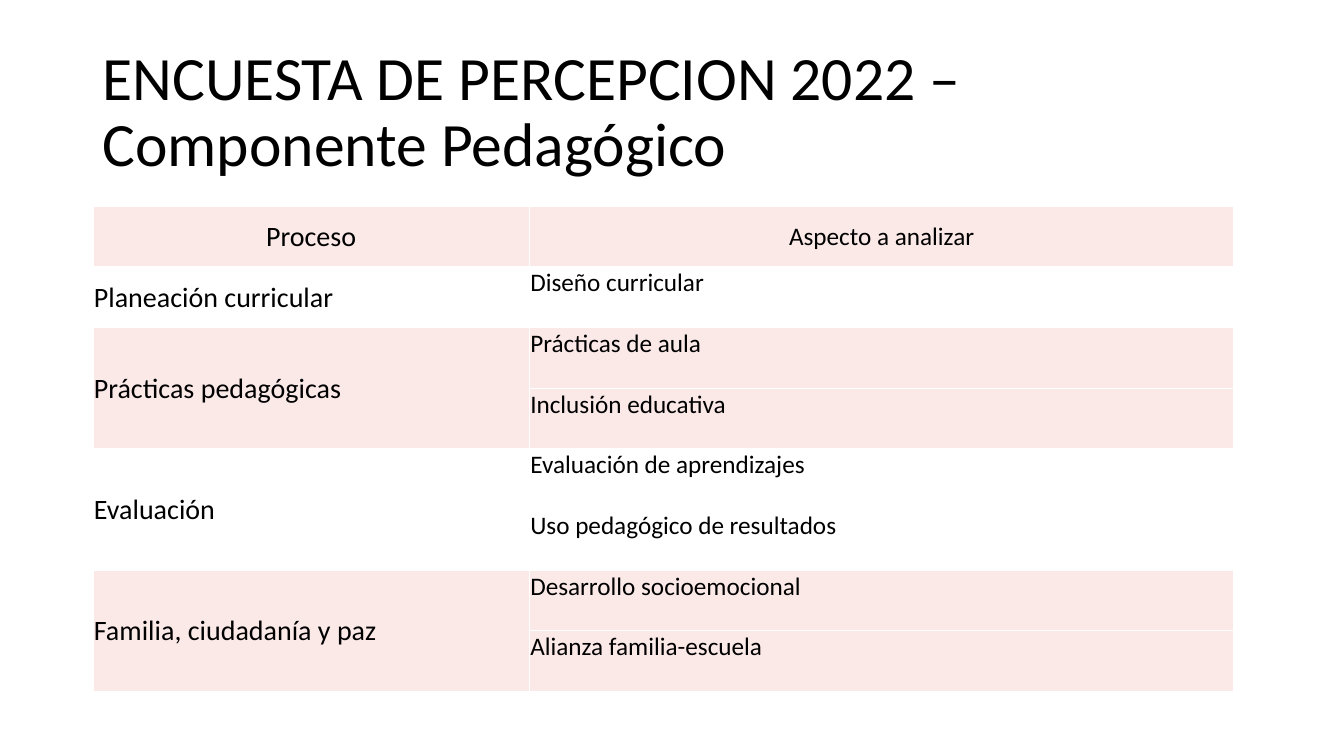
from lxml.etree import SubElement
from pptx import Presentation
from pptx.dml.color import RGBColor
from pptx.enum.text import MSO_ANCHOR, PP_ALIGN
from pptx.oxml.ns import qn
from pptx.util import Pt

FONT = "Calibri"
BLACK = RGBColor(0x00, 0x00, 0x00)
WHITE = RGBColor(0xFF, 0xFF, 0xFF)
PINK = RGBColor(0xFB, 0xE9, 0xE8)

TITLE = "ENCUESTA DE PERCEPCION 2022 – Componente Pedagógico"
HEADINGS = ("Proceso", "Aspecto a analizar")
PROCESSES = [
    ("Planeación curricular", ["Diseño curricular"]),
    ("Prácticas pedagógicas", ["Prácticas de aula", "Inclusión educativa"]),
    ("Evaluación", ["Evaluación de aprendizajes", "Uso pedagógico de resultados"]),
    ("Familia, ciudadanía y paz", ["Desarrollo socioemocional", "Alianza familia-escuela"]),
]
PROCESS_SIZE, ASPECT_SIZE = 20, 18
PROCESS_SHARE = 0.3825
CELL_FORMAT = {
    "margin_left": Pt(0.7),
    "margin_right": Pt(0.7),
    "margin_top": Pt(0.7),
    "margin_bottom": Pt(0),
}


def write(frame, text, size, align):
    para = frame.paragraphs[0]
    para.alignment = align
    span = para.add_run()
    span.text = text
    span.font.name = FONT
    span.font.size = Pt(size)
    span.font.color.rgb = BLACK
    return para


def add_title(page, left, top, width, height):
    title = page.shapes.title
    box = {"left": left, "top": top, "width": width, "height": height}
    for name, value in box.items():
        setattr(title, name, Pt(value))
    title.text_frame.word_wrap = True
    title.text_frame.vertical_anchor = MSO_ANCHOR.MIDDLE
    para = write(title.text_frame, TITLE, 44, PP_ALIGN.LEFT)
    para.line_spacing = 0.9


def style_cell(cell, shaded):
    """Give the cell its margins, white borders and band fill."""
    for name, value in CELL_FORMAT.items():
        setattr(cell, name, value)
    properties = cell._tc.get_or_add_tcPr()
    for side in ("a:lnL", "a:lnR", "a:lnT", "a:lnB"):
        line = SubElement(properties, qn(side), w=str(Pt(1)))
        fill = SubElement(line, qn("a:solidFill"))
        SubElement(fill, qn("a:srgbClr"), val=str(WHITE))
    if shaded:
        cell.fill.solid()
        cell.fill.fore_color.rgb = PINK
    else:
        cell.fill.background()


def fill_cell(cell, text, size, align, anchor):
    cell.vertical_anchor = anchor
    write(cell.text_frame, text, size, align)


def add_process_table(page, left, top, width, height):
    row_count = 1 + sum(len(aspects) for _, aspects in PROCESSES)
    frame = page.shapes.add_table(row_count, 2, Pt(left), Pt(top), Pt(width), Pt(height))
    table = frame.table
    table.horz_banding = False
    table.columns[0].width = Pt(width * PROCESS_SHARE)
    table.columns[1].width = Pt(width * (1 - PROCESS_SHARE))
    for row in table.rows:
        row.height = Pt(height / row_count)

    for column, size in enumerate((PROCESS_SIZE, ASPECT_SIZE)):
        cell = table.cell(0, column)
        style_cell(cell, True)
        fill_cell(cell, HEADINGS[column], size, PP_ALIGN.CENTER, MSO_ANCHOR.MIDDLE)

    first = 1
    for index, (process, aspects) in enumerate(PROCESSES):
        for row, aspect in enumerate(aspects, first):
            for column in range(2):
                style_cell(table.cell(row, column), index % 2 == 1)
            fill_cell(table.cell(row, 1), aspect, ASPECT_SIZE,
                      PP_ALIGN.JUSTIFY, MSO_ANCHOR.TOP)
        process_cell = table.cell(first, 0)
        if len(aspects) > 1:
            process_cell.merge(table.cell(first + len(aspects) - 1, 0))
        fill_cell(process_cell, process, PROCESS_SIZE, PP_ALIGN.LEFT, MSO_ANCHOR.MIDDLE)
        first += len(aspects)


def main():
    deck = Presentation()
    deck.slide_width, deck.slide_height = Pt(960), Pt(540)
    page = deck.slides.add_slide(deck.slide_layouts[5])
    add_title(page, 66, 28.75, 828, 104.4)
    add_process_table(page, 66.4, 147.2, 815, 346.8)
    deck.save("out.pptx")


if __name__ == "__main__":
    main()
